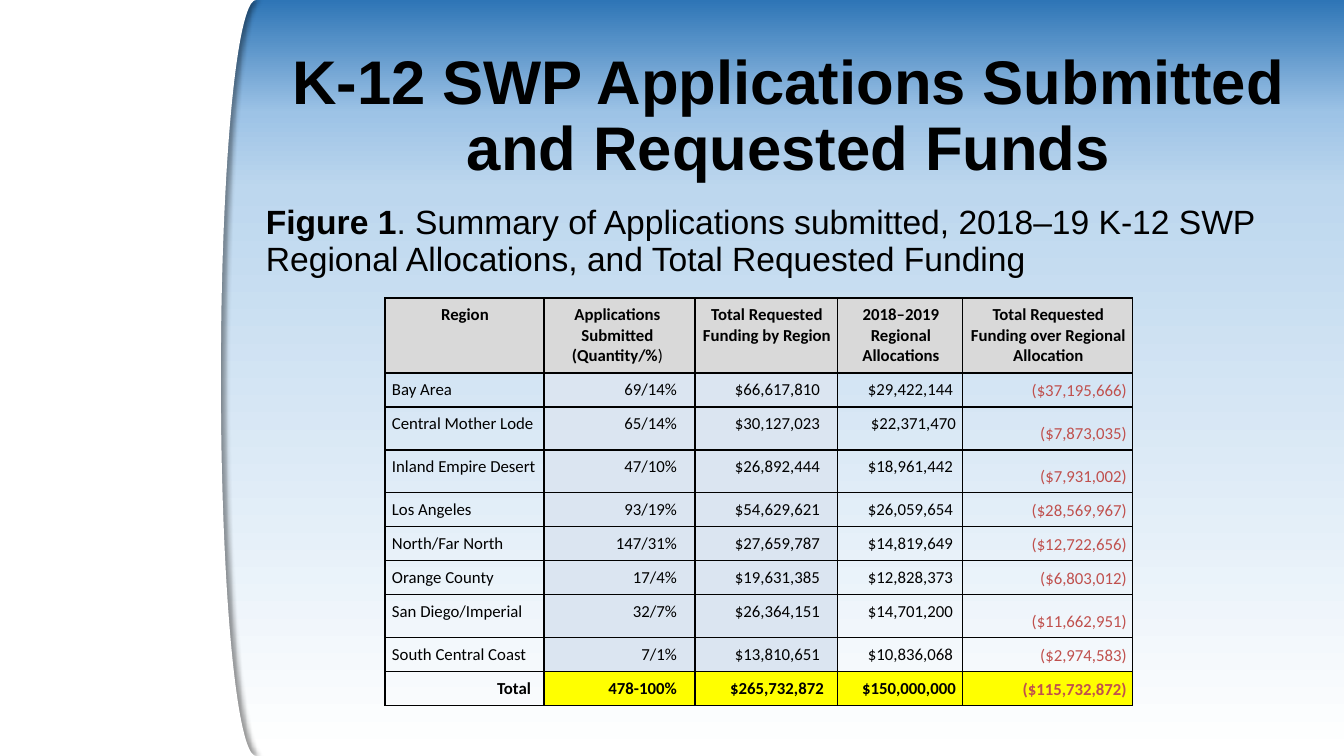
from lxml import etree
from pptx import Presentation
from pptx import util as u
from pptx.dml.color import RGBColor
from pptx.enum import shapes, text
from pptx.oxml import parse_xml

PX = 914400 / 100.8
NS = 'xmlns:a="http://schemas.openxmlformats.org/drawingml/2006/main"'
LEFT, MID, RIGHT = text.PP_ALIGN.LEFT, text.PP_ALIGN.CENTER, text.PP_ALIGN.RIGHT


def px(n):
    return u.Emu(round(n * PX))


def write(frame, words, tail="", size=12, font="Calibri", bold=False,
          color="000000", align=LEFT, space=1.0, end=0):
    """Write lines of words; tail closes the last line in the other weight."""
    frame.word_wrap = True
    lines = words.split("\n")
    for i, line in enumerate(lines):
        para = frame.paragraphs[0] if i == 0 else frame.add_paragraph()
        para.alignment, para.line_spacing = align, space
        if end:
            para._p.get_or_add_pPr().set("marR", str(px(end)))
        runs = [(line, bold)]
        if tail and i == len(lines) - 1:
            runs.append((tail, not bold))
        for part, heavy in runs:
            run = para.add_run()
            run.text = part
            run.font.size, run.font.name, run.font.bold = u.Pt(size), font, heavy
            run.font.color.rgb = RGBColor.from_string(color)


deck = Presentation()
deck.slide_width, deck.slide_height = px(1344), px(756)
slide = deck.slides.add_slide(deck.slide_layouts[6])

# Background gradient
fill = slide.background.fill
fill.gradient()
fill.gradient_angle = 270
stops = slide.element.xpath(".//p:bg//a:gsLst")[0]
for stop in list(stops):
    stops.remove(stop)
for pos, color in [(0, "2E75B6"), (15, "9DC3E6"), (25, "BDD7EE"), (100, "FFFFFF")]:
    stops.append(parse_xml(
        f'<a:gs {NS} pos="{pos * 1000}"><a:srgbClr val="{color}"/></a:gs>'))

# White side panel with a curved, shaded edge
KIND = shapes.MSO_SHAPE
for kind, x, wide in [(KIND.FLOWCHART_STORED_DATA, 45, 211), (KIND.RECTANGLE, 0, 117)]:
    panel = slide.shapes.add_shape(kind, px(x), 0, px(wide), px(756))
    panel.shadow.inherit = False
    panel.fill.solid()
    panel.fill.fore_color.rgb = RGBColor.from_string("FFFFFF")
    panel.line.fill.background()
    if kind == KIND.FLOWCHART_STORED_DATA:
        shade = panel._element.spPr.xpath("a:effectLst")[0]
        shade.append(parse_xml(
            f'<a:outerShdw {NS} blurRad="{u.Pt(4)}" dist="{u.Pt(3)}" dir="0" '
            'algn="l" rotWithShape="0"><a:srgbClr val="000000">'
            '<a:alpha val="40000"/></a:srgbClr></a:outerShdw>'))

# Applications table
HEAD = ["Region", "Applications Submitted\n(Quantity/%", "Total Requested Funding by Region",
        "2018–2019 Regional Allocations", "Total Requested Funding over Regional Allocation"]
DATA = [
    ["Bay Area", "69/14%", "$66,617,810", "$29,422,144", "($37,195,666)"],
    ["Central Mother Lode", "65/14%", "$30,127,023", "$22,371,470", "($7,873,035)"],
    ["Inland Empire Desert", "47/10%", "$26,892,444", "$18,961,442", "($7,931,002)"],
    ["Los Angeles", "93/19%", "$54,629,621", "$26,059,654", "($28,569,967)"],
    ["North/Far North", "147/31%", "$27,659,787", "$14,819,649", "($12,722,656)"],
    ["Orange County", "17/4%", "$19,631,385", "$12,828,373", "($6,803,012)"],
    ["San Diego/Imperial", "32/7%", "$26,364,151", "$14,701,200", "($11,662,951)"],
    ["South Central Coast", "7/1%", "$13,810,651", "$10,836,068", "($2,974,583)"],
    ["Total", "478-100%", "$265,732,872", "$150,000,000", "($115,732,872)"],
]
COLS = [159, 151, 143, 125, 170]
ROWS = [75, 34, 43, 43, 34, 34, 34, 43, 34, 34]
LAST = len(DATA)
ENDS = {"head": [0, 5, 0, 0, 0], "body": [0, 12, 12, 4, 0], "total": [7, 12, 8, 1, 0]}
FILLS = {"head": ["D9D9D9"] * 5, "body": [None, "DBE5F1", "DBE5F1", None, None],
         "total": [None] + ["FFFF00"] * 4}

table = slide.shapes.add_table(len(ROWS), len(COLS), px(385), px(298),
                               px(sum(COLS)), px(sum(ROWS))).table
table.first_row = table.horz_banding = False
for col, wide in zip(table.columns, COLS):
    col.width = px(wide)
for row, tall in zip(table.rows, ROWS):
    row.height = px(tall)

for r, line in enumerate([HEAD] + DATA):
    part = "head" if r == 0 else "total" if r == LAST else "body"
    for c, words in enumerate(line):
        cell = table.cell(r, c)
        cell.margin_left = cell.margin_top = px(7)
        cell.margin_right = cell.margin_bottom = px(6)
        if part == "head":
            align = MID
        else:
            align = LEFT if c == 0 and part == "body" else RIGHT
        red = c == 4 and part != "head"
        if red:
            cell.vertical_anchor = text.MSO_ANCHOR.BOTTOM
        end = 1 if words == "$22,371,470" else ENDS[part][c]
        write(cell.text_frame, words, tail=")" if words.endswith("(Quantity/%") else "",
              bold=part != "body", color="C0504D" if red else "000000",
              align=align, end=end)
        # Borders come before the fill in the cell's properties
        props = cell._tc.get_or_add_tcPr()
        for side in "LRTB":
            props.append(etree.fromstring(
                f'<a:ln{side} {NS} w="12700"><a:solidFill><a:srgbClr val="000000"/>'
                f'</a:solidFill></a:ln{side}>'))
        tint = FILLS[part][c]
        if tint:
            cell.fill.solid()
            cell.fill.fore_color.rgb = RGBColor.from_string(tint)
        else:
            cell.fill.background()

# Figure caption
note = slide.shapes.add_textbox(px(256), px(201), px(1066), px(80)).text_frame
write(note, "Figure 1", tail=". Summary of Applications submitted, 2018–19 K-12 SWP "
      "Regional Allocations, and Total Requested Funding",
      size=24, font="Arial", bold=True, space=0.9)

# Title
title = slide.shapes.add_textbox(px(256), px(40), px(1066), px(155)).text_frame
title.vertical_anchor = text.MSO_ANCHOR.MIDDLE
write(title, "K-12 SWP Applications Submitted and Requested Funds",
      size=44, font="Arial", bold=True, align=MID, space=0.9)

deck.save("out.pptx")
